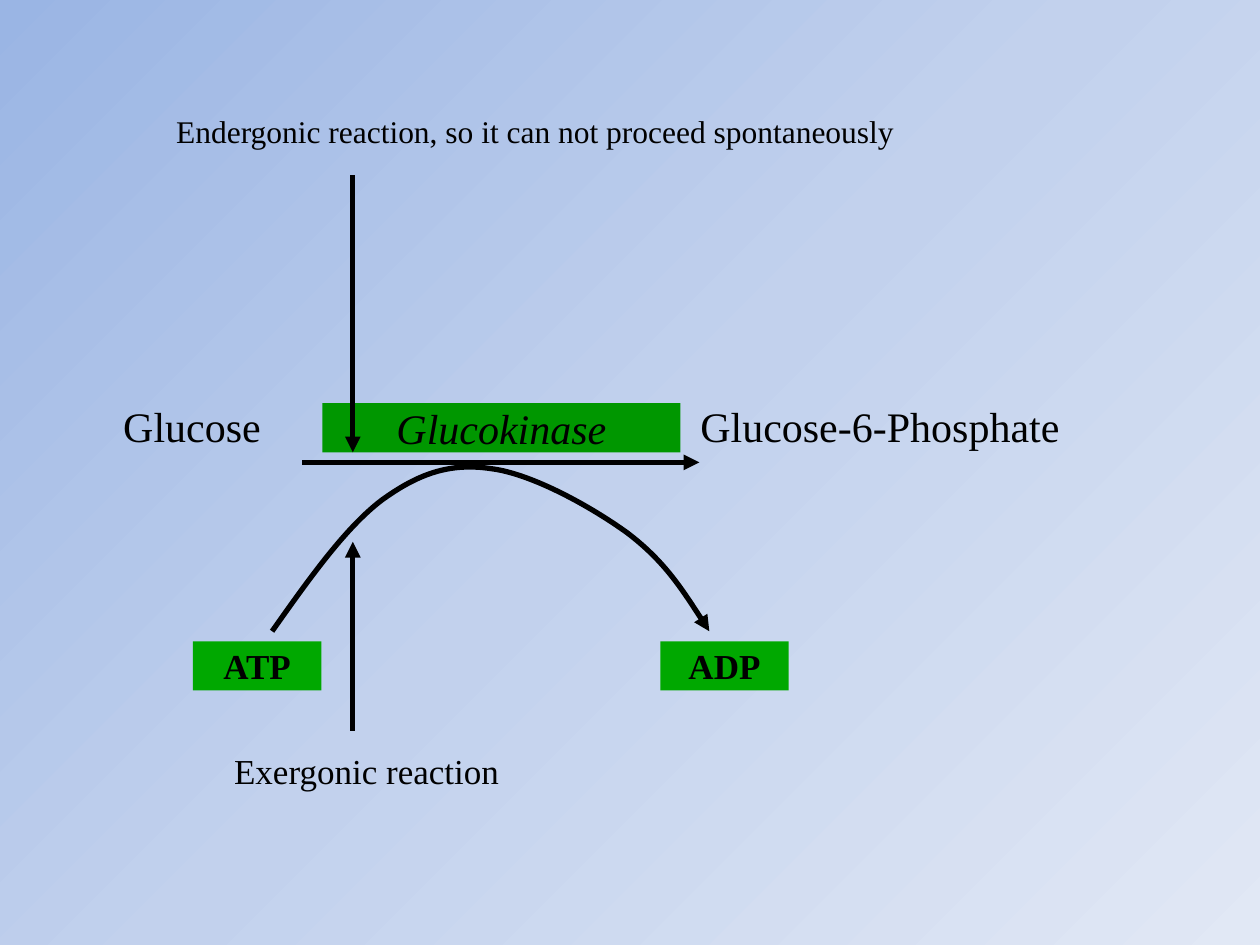
"""Build a slide on the coupled glucokinase reaction."""
from copy import deepcopy
from pptx import Presentation
from pptx.dml.color import RGBColor
from pptx.enum.shapes import MSO_CONNECTOR, MSO_SHAPE
from pptx.enum.text import MSO_ANCHOR, PP_ALIGN
from pptx.oxml.ns import qn
from pptx.oxml.xmlchemy import OxmlElement
from pptx.util import Inches, Pt

RECT = MSO_SHAPE.RECTANGLE
LINE = MSO_CONNECTOR.STRAIGHT
MIDDLE = MSO_ANCHOR.MIDDLE
LEFT, CENTER = PP_ALIGN.LEFT, PP_ALIGN.CENTER
HEX = {"ink": "000000", "green": "00A800", "enzyme": "009700",
       "start": "9AB5E4", "mid": "C2D1ED", "end": "E1E8F5"}
RGB = {name: RGBColor.from_string(code) for name, code in HEX.items()}


def write(shape, text, size, align, bold=False, italic=False):
    frame = shape.text_frame
    frame.word_wrap = True
    frame.vertical_anchor = MIDDLE
    para = frame.paragraphs[0]
    para.alignment = align
    run = para.add_run()
    run.text = text
    font = run.font
    font.name, font.size = "Times New Roman", Pt(size)
    font.bold, font.italic = bold, italic
    font.color.rgb = RGB["ink"]


def point(shape):
    shape.line.color.rgb = RGB["ink"]
    shape.line.width = Pt(3)
    tail = OxmlElement("a:tailEnd")
    tail.set("type", "triangle")
    shape.line._get_or_add_ln().append(tail)
    shape._element.spPr.append(OxmlElement("a:effectLst"))


deck = Presentation()
deck.slide_width, deck.slide_height = Inches(10), Inches(7.5)
slide = deck.slides.add_slide(deck.slide_layouts[6])
shapes = slide.shapes

fill = slide.background.fill
fill.gradient()
fill.gradient_angle = 315
stops = slide._element.find(".//" + qn("a:gsLst"))
stops.insert(1, deepcopy(stops[0]))
for stop, place, name in zip(fill.gradient_stops, (0, 0.5, 1), ("start", "mid", "end")):
    stop.position = place
    stop.color.rgb = RGB[name]

curve = [(2.45, 4.6), (2.74, 4.19), (3.03, 3.97),
         (3.32, 3.76), (3.57, 3.67), (3.9, 3.72),
         (4.22, 3.76), (4.69, 4.02), (4.98, 4.23),
         (5.27, 4.45), (5.45, 4.73), (5.63, 5.01)]
pen = shapes.build_freeform(Inches(2.16), Inches(5.01))
pen.add_line_segments([(Inches(x), Inches(y)) for x, y in curve], close=False)
arc = pen.convert_to_shape()
arc.fill.background()
steps = arc._element.findall(".//" + qn("a:lnTo"))
for first in range(0, len(steps), 3):
    bend = OxmlElement("a:cubicBezTo")
    steps[first].addprevious(bend)
    for step in steps[first:first + 3]:
        bend.append(step[0])
        step.getparent().remove(step)
point(arc)

boxes = [("ATP", 1.53, 5.09, 1.02, "green", 20, True, False),
         ("ADP", 5.24, 5.09, 1.02, "green", 20, True, False),
         ("Glucokinase", 2.56, 3.2, 2.84, "enzyme", 24, False, True)]
for text, x, y, width, color, size, bold, italic in boxes:
    box = shapes.add_shape(RECT, Inches(x), Inches(y), Inches(width), Inches(0.39))
    box.shadow.inherit = False
    box.fill.solid()
    box.fill.fore_color.rgb = RGB[color]
    box.line.fill.background()
    write(box, text, size, CENTER, bold, italic)

arrows = [(2.4, 3.67, 5.55, 3.67), (2.8, 1.39, 2.8, 3.59), (2.8, 5.8, 2.8, 4.3)]
for ends in arrows:
    point(shapes.add_connector(LINE, *map(Inches, ends)))

labels = [("Glucose", 0.88, 3.13, 1.5, 0.5, 24, LEFT),
          ("Glucose-6-Phosphate", 5.46, 3.13, 3.4, 0.5, 24, LEFT),
          ("Endergonic reaction, so it can not proceed spontaneously",
           1.3, 0.76, 6.3, 0.55, 18, LEFT),
          ("Exergonic reaction", 1.14, 5.88, 3.54, 0.47, 20, CENTER)]
for text, x, y, width, height, size, align in labels:
    label = shapes.add_textbox(Inches(x), Inches(y), Inches(width), Inches(height))
    write(label, text, size, align)

deck.save("out.pptx")
